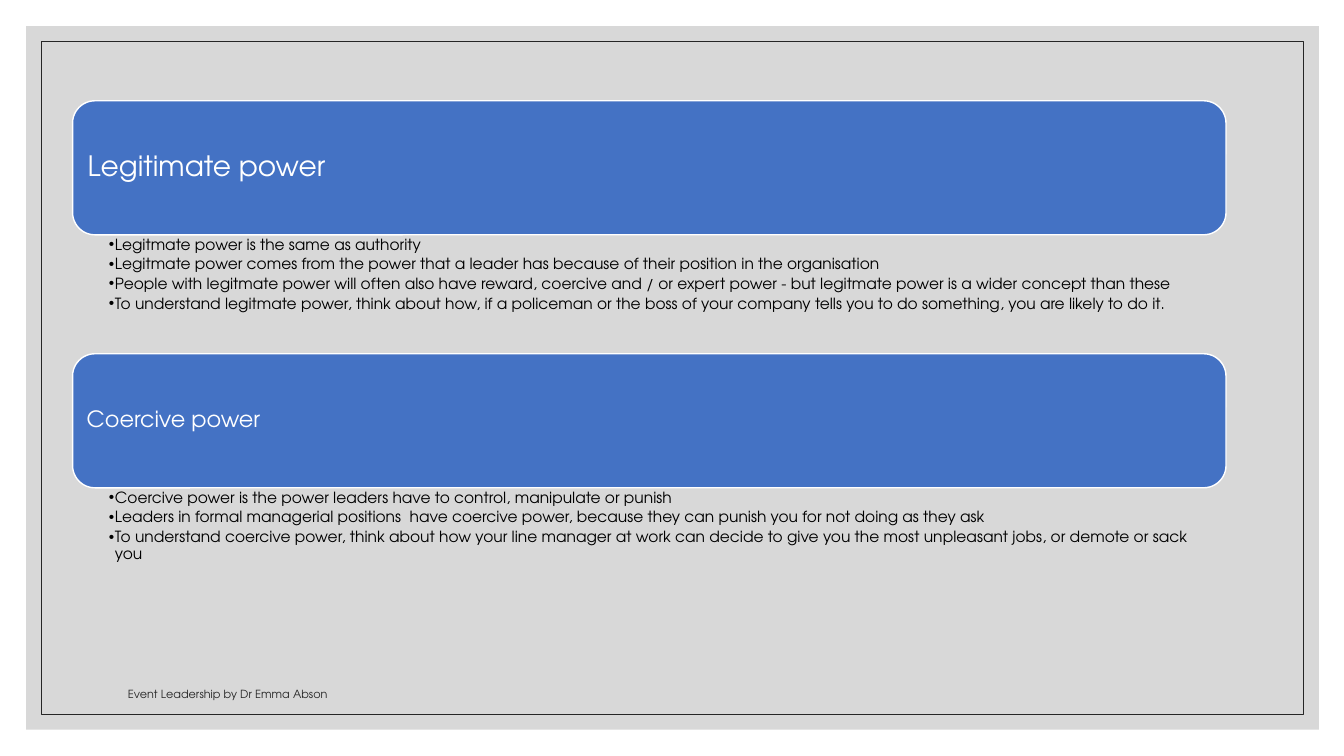
from pptx import Presentation
from pptx.dml.color import RGBColor
from pptx.enum.shapes import MSO_SHAPE as Shape
from pptx.enum.text import MSO_ANCHOR as Anchor, MSO_AUTO_SIZE as AutoSize
from pptx.oxml.ns import qn
from pptx.util import Inches, Pt
from lxml.etree import SubElement

FONT = "TeX Gyre Adventor"
WIDTH, HEIGHT = 13.33, 7.5
LEFT, TOP, BLOCK_WIDTH = 0.72, 1, 11.44
BAR_HEIGHT, LIST_HEIGHT = 1.33, 1.18

# heading, heading size, heading inset, points
SECTIONS = [
    ("Legitimate power", 20, 0.08, [
        "Legitmate power is the same as authority",
        "Legitmate power comes from the power that a leader has because of their position in the organisation",
        "People with legitmate power will often also have reward, coercive and / or expert power - but legitmate power is a wider concept than these",
        "To understand legitmate power, think about how, if a policeman or the boss of your company tells you to do something, you are likely to do it.",
    ]),
    ("Coercive power", 16, 0.07, [
        "Coercive power is the power leaders have to control, manipulate or punish",
        "Leaders in formal managerial positions  have coercive power, because they can punish you for not doing as they ask",
        "To understand coercive power, think about how your line manager at work can decide to give you the most unpleasant jobs, or demote or sack you",
    ]),
]


def add_panel(kind, left, top, width, height, fill=None, line=None, weight=1):
    panel = page.shapes.add_shape(kind, *map(Inches, (left, top, width, height)))
    panel.shadow.inherit = False
    for paint, color in ((panel.fill, fill), (panel.line.fill, line)):
        if color:
            paint.solid()
            paint.fore_color.rgb = RGBColor.from_string(color)
        else:
            paint.background()
    if line:
        panel.line.width = Pt(weight)
    return panel


def write_text(box, area, lines, size, color, anchor, insets):
    box.left, box.top, box.width, box.height = map(Inches, area)
    frame = box.text_frame
    frame.text = "\n".join(lines)
    frame.word_wrap = True
    frame.auto_size = AutoSize.NONE
    frame.vertical_anchor = anchor
    frame.margin_left, frame.margin_top, frame.margin_right, frame.margin_bottom = map(Inches, insets)
    for para in frame.paragraphs:
        para.line_spacing = 0.9
        para.space_before = Pt(0)
        for span in para.runs:
            span.font.name = FONT
            span.font.size = Pt(size)
            span.font.bold = False
            span.font.color.rgb = RGBColor.from_string(color)
    return frame


deck = Presentation()
deck.slide_width, deck.slide_height = Inches(WIDTH), Inches(HEIGHT)
page = deck.slides.add_slide(deck.slide_layouts.get_by_name("Comparison"))
title, *holders = page.placeholders
title.element.getparent().remove(title.element)

# Grey backdrop and thin frame
backdrop = add_panel(Shape.RECTANGLE, 0.26, 0.26, WIDTH - 0.51, HEIGHT - 0.52, fill="BFBFBF")
tint = backdrop.fill._xPr.find(".//" + qn("a:srgbClr"))
SubElement(tint, qn("a:alpha"), val="60000")
add_panel(Shape.RECTANGLE, 0.41, 0.41, WIDTH - 0.81, HEIGHT - 0.82, line="262626", weight=0.5)

# Sections: a bar with its heading, and the list below it
for row, (heading, size, inset, points) in enumerate(SECTIONS):
    bar_top = TOP + row * (BAR_HEIGHT + LIST_HEIGHT)
    heading_box, list_box = holders[2 * row:2 * row + 2]
    add_panel(Shape.ROUNDED_RECTANGLE, LEFT, bar_top, BLOCK_WIDTH, BAR_HEIGHT,
              fill="4472C4", line="FFFFFF")
    write_text(heading_box, (LEFT + 0.07, bar_top + 0.06, BLOCK_WIDTH - 0.13, 1.2),
               [heading], size, "FFFFFF", Anchor.MIDDLE, [inset] * 4)
    frame = write_text(list_box, (LEFT, bar_top + BAR_HEIGHT, BLOCK_WIDTH, LIST_HEIGHT),
                       points, 11, "000000", Anchor.TOP, (0.36, 0.02, 0.09, 0.02))
    for para in frame.paragraphs:
        para.space_after = Pt(2.2)
        properties = para._p.get_or_add_pPr()
        properties.set("marL", str(Inches(0.06)))
        properties.set("indent", str(Inches(-0.06)))
        SubElement(properties, qn("a:buChar"), char="•")

# Bring the headings and lists in front of the panels
for holder in holders:
    page.shapes.element.append(holder.element)

# Footer
footer = page.shapes.add_textbox(0, 0, 0, 0)
write_text(footer, (1.17, 6.6, 6.36, 0.4), ["Event Leadership by Dr Emma Abson"],
           8, "262626", Anchor.BOTTOM, (0.1, 0.05, 0.1, 0.05))

deck.save("out.pptx")
